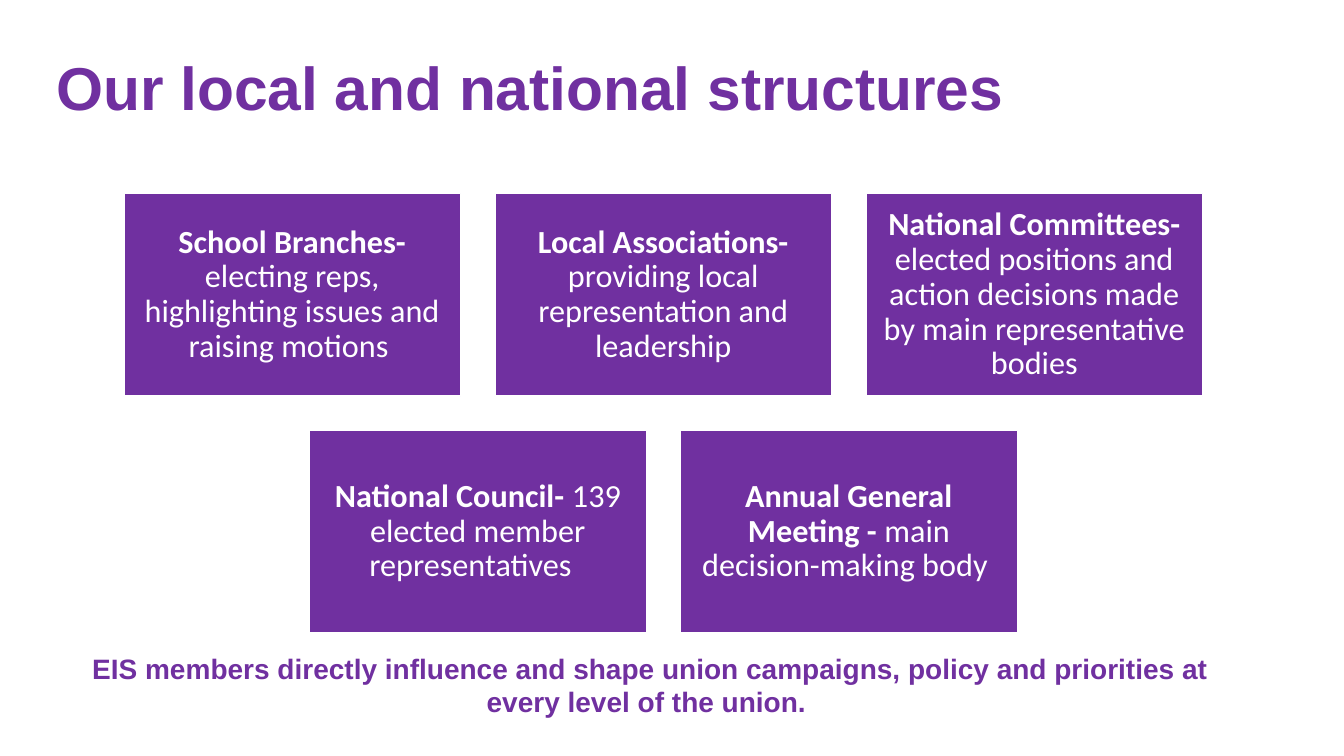
from pptx import Presentation
from pptx.dml.color import RGBColor
from pptx.enum.shapes import MSO_SHAPE as Shape
from pptx.enum.text import MSO_ANCHOR as Anchor, PP_ALIGN as Align
from pptx.util import Inches, Pt

PURPLE, WHITE = "7030A0", "FFFFFF"
TITLE = "Our local and national structures"
MESSAGE = ("EIS members directly influence and shape union campaigns, "
           "policy and priorities at every level of the union. ")
STRUCTURE_ROWS = [
    [("School Branches- ", "electing reps, highlighting issues and raising motions "),
     ("Local Associations- ", "providing local representation and leadership"),
     ("National Committees- ", "elected positions and action decisions made "
                               "by main representative bodies")],
    [("National Council- ", "139 elected member representatives\u00a0 "),
     ("Annual General Meeting - ", "main decision-making body ")],
]

CARD_WIDTH, CARD_HEIGHT, GAP = 3.34, 2.01, 0.34
GRID_CENTRE, GRID_TOP = 6.58, 1.92


def color(hex_value):
    return RGBColor.from_string(hex_value)


def write(shape, runs, font, size, hex_value, align, anchor, spacing=1.0):
    """Fill the shape with one paragraph of (text, bold) runs."""
    frame = shape.text_frame
    frame.word_wrap = True
    frame.vertical_anchor = anchor
    para = frame.paragraphs[0]
    para.alignment = align
    para.line_spacing = spacing
    for text, bold in runs:
        span = para.add_run()
        span.text = text
        span.font.name = font
        span.font.size = Pt(size)
        span.font.bold = bold
        span.font.color.rgb = color(hex_value)


def add_card(slide, left, top, name, role):
    card = slide.shapes.add_shape(Shape.RECTANGLE, Inches(left), Inches(top),
                                  Inches(CARD_WIDTH), Inches(CARD_HEIGHT))
    card.shadow.inherit = False
    card.fill.solid()
    card.fill.fore_color.rgb = color(PURPLE)
    card.line.color.rgb = color(WHITE)
    card.line.width = Pt(1)
    frame = card.text_frame
    frame.margin_left = frame.margin_right = Inches(0.1)
    frame.margin_top = frame.margin_bottom = Inches(0.1)
    write(card, [(name, True), (role, False)], "Calibri", 23, WHITE,
          Align.CENTER, Anchor.MIDDLE, 0.9)


def main():
    deck = Presentation()
    deck.slide_width, deck.slide_height = Inches(13.33), Inches(7.5)
    slide = deck.slides.add_slide(deck.slide_layouts[6])

    title = slide.shapes.add_textbox(Inches(0.46), Inches(0.54), Inches(10.3), Inches(0.74))
    write(title, [(TITLE, True)], "Arial", 43.2, PURPLE, Align.LEFT, Anchor.BOTTOM, 0.9)

    message = slide.shapes.add_textbox(Inches(0.79), Inches(6.41), Inches(11.32), Inches(0.77))
    write(message, [(MESSAGE, True)], "Arial", 20, PURPLE, Align.CENTER, Anchor.TOP)

    for row, cards in enumerate(STRUCTURE_ROWS):
        row_width = len(cards) * (CARD_WIDTH + GAP) - GAP
        row_left = GRID_CENTRE - row_width / 2
        top = GRID_TOP + row * (CARD_HEIGHT + GAP)
        for column, (name, role) in enumerate(cards):
            add_card(slide, row_left + column * (CARD_WIDTH + GAP), top, name, role)

    deck.save("out.pptx")


if __name__ == "__main__":
    main()
